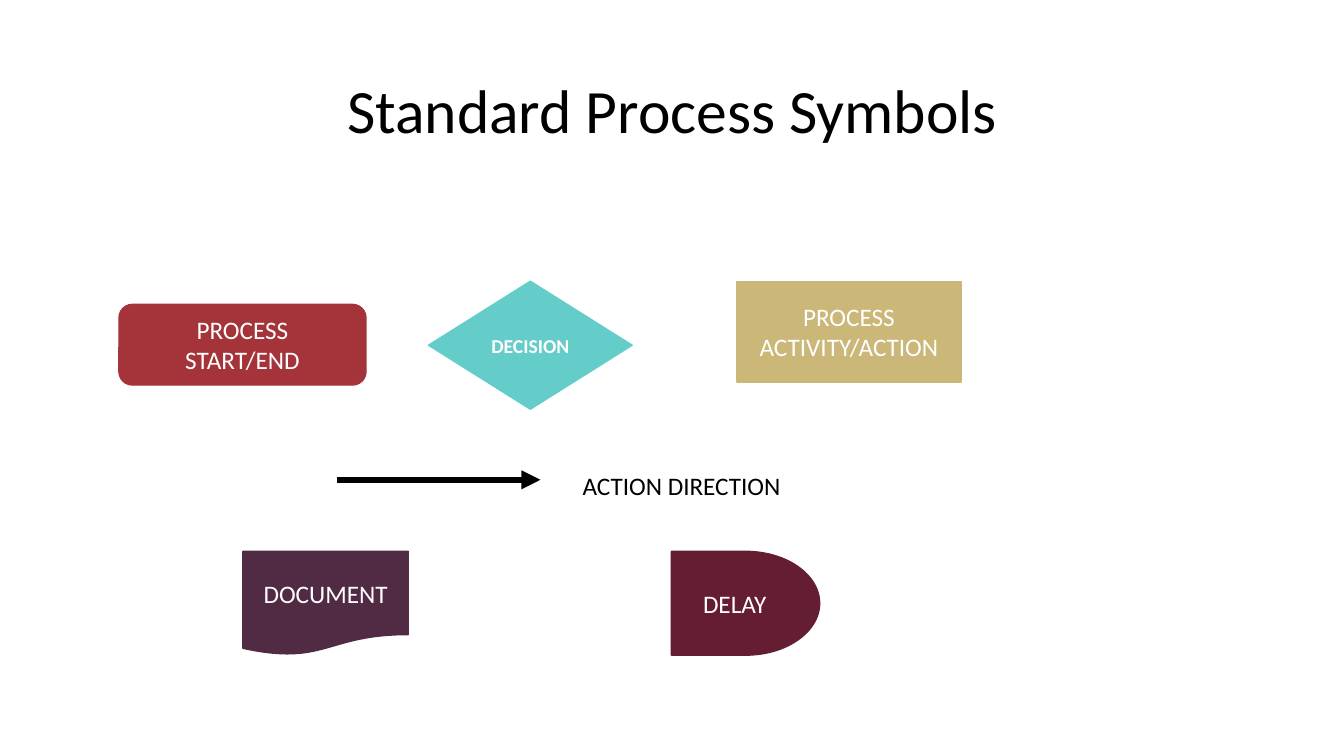
from dataclasses import dataclass

from lxml.etree import SubElement
from pptx import Presentation
from pptx.dml.color import RGBColor
from pptx.enum.shapes import MSO_CONNECTOR, MSO_SHAPE as Shape
from pptx.enum.text import MSO_ANCHOR as Anchor, PP_ALIGN as Align
from pptx.oxml.ns import qn
from pptx.util import Inches, Pt


@dataclass(frozen=True)
class Theme:
    font: str = "Calibri"
    title_size: int = 44
    body_size: int = 18
    small_size: int = 14
    black: str = "000000"
    white: str = "FFFFFF"
    teal: str = "64CCC9"
    sand: str = "CBB778"
    red: str = "A4343A"
    plum: str = "512A44"
    wine: str = "651D32"


THEME = Theme()


def write_lines(frame, lines, size, color, align, bold=False):
    """Put each line in its own paragraph of the text frame."""
    frame.word_wrap = True
    for index, line in enumerate(lines):
        para = frame.paragraphs[0] if index == 0 else frame.add_paragraph()
        para.text = line
        para.alignment = align
        para.font.name = THEME.font
        para.font.size = Pt(size)
        para.font.bold = bold
        para.font.color.rgb = RGBColor.from_string(color)


def add_symbol(page, kind, place, color, lines, size=THEME.body_size, bold=False):
    symbol = page.shapes.add_shape(kind, *map(Inches, place))
    symbol.shadow.inherit = False
    symbol.fill.solid()
    symbol.fill.fore_color.rgb = RGBColor.from_string(color)
    symbol.line.color.rgb = RGBColor.from_string(color)
    symbol.line.width = Pt(1)
    symbol.text_frame.vertical_anchor = Anchor.MIDDLE
    write_lines(symbol.text_frame, lines, size, THEME.white, Align.CENTER, bold)


def add_label(page, place, text, size, align=Align.LEFT, anchor=Anchor.TOP):
    box = page.shapes.add_textbox(*map(Inches, place))
    frame = box.text_frame
    frame.vertical_anchor = anchor
    write_lines(frame, [text], size, THEME.black, align)
    return frame


def add_arrow(page, left, right, top):
    arrow = page.shapes.add_connector(
        MSO_CONNECTOR.STRAIGHT, Inches(left), Inches(top), Inches(right), Inches(top))
    arrow.line.color.rgb = RGBColor.from_string(THEME.black)
    arrow.line.width = Pt(4.5)
    SubElement(arrow.line._get_or_add_ln(), qn("a:tailEnd"), type="triangle")
    SubElement(arrow._element.spPr, qn("a:effectLst"))


def add_title(page, text):
    frame = add_label(page, (0.92, 0.4, 11.5, 1.45), text,
                      THEME.title_size, Align.CENTER, Anchor.MIDDLE)
    frame.paragraphs[0].line_spacing = 0.9


def main():
    deck = Presentation()
    deck.slide_width, deck.slide_height = Inches(13.33), Inches(7.5)
    page = deck.slides.add_slide(deck.slide_layouts[6])

    add_title(page, "Standard Process Symbols")

    add_symbol(page, Shape.FLOWCHART_ALTERNATE_PROCESS, (1.18, 3.02, 2.45, 0.8),
               THEME.red, ["PROCESS", "START/END"])
    add_symbol(page, Shape.FLOWCHART_DECISION, (4.25, 2.79, 2.02, 1.27),
               THEME.teal, ["DECISION"], THEME.small_size, bold=True)
    add_symbol(page, Shape.FLOWCHART_PROCESS, (7.31, 2.79, 2.22, 1),
               THEME.sand, ["PROCESS", "ACTIVITY/ACTION"])

    add_arrow(page, left=3.34, right=5.36, top=4.76)
    add_label(page, (5.68, 4.62, 2.45, 0.4), "ACTION DIRECTION", THEME.body_size)

    add_symbol(page, Shape.FLOWCHART_DOCUMENT, (2.41, 5.47, 1.64, 1.03),
               THEME.plum, ["DOCUMENT"])
    add_symbol(page, Shape.FLOWCHART_DELAY, (6.66, 5.47, 1.47, 1.03),
               THEME.wine, ["DELAY"])

    deck.save("out.pptx")


if __name__ == "__main__":
    main()
